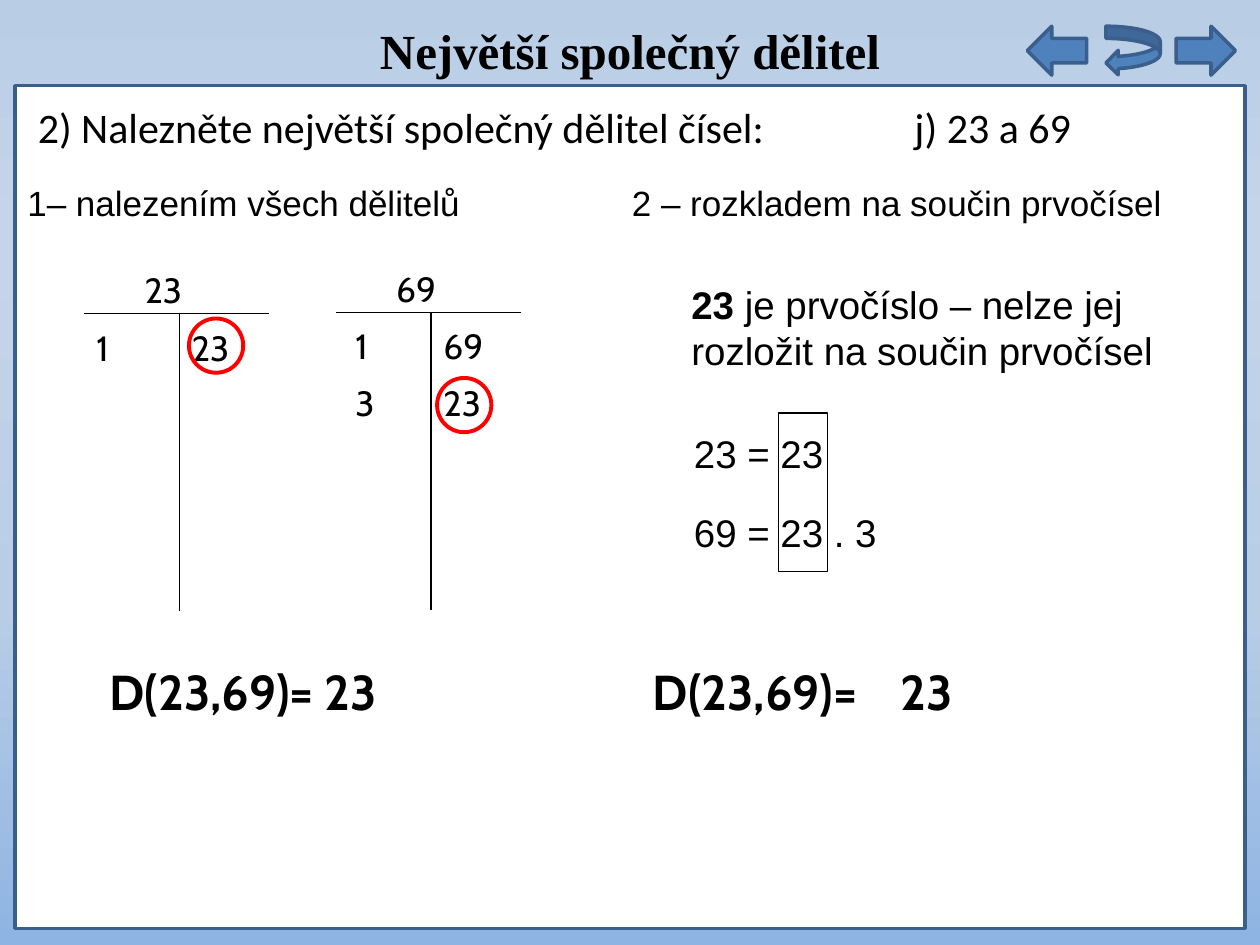
from copy import deepcopy
from pptx import Presentation
from pptx.dml.color import RGBColor
from pptx.enum.shapes import MSO_CONNECTOR as Link, MSO_SHAPE as Kind
from pptx.enum.text import MSO_ANCHOR as Anchor, MSO_AUTO_SIZE as Auto, PP_ALIGN as Align
from pptx.oxml.ns import qn
from pptx.oxml.xmlchemy import OxmlElement as Node
from pptx.util import Pt

BLACK = RGBColor(0, 0, 0)
WHITE = RGBColor(255, 255, 255)
RED = RGBColor(255, 0, 0)
BLUE = RGBColor(0x4F, 0x81, 0xBD)
NAVY = RGBColor(0x3A, 0x5F, 0x8C)
SKY = [(0, "B9CDE5"), (25, "C5D5E9"), (64, "B9CDE5"), (100, "8EB4E3")]

TITLE = {"name": "Times New Roman", "size": Pt(28), "bold": True}
TASK = {"name": "Calibri", "size": Pt(24)}
HEAD = {"name": "Arial", "size": Pt(20)}
BODY = {"name": "Arial", "size": Pt(22)}
DIGIT = {"name": "Cabin", "size": Pt(20)}
ANSWER = {"name": "Cabin", "size": Pt(28), "bold": True}


def paint(slide):
    """Fill the background with the sky gradient."""
    fill = slide.background.fill
    fill.gradient()
    fill.gradient_angle = 270
    stops = slide.element.find(".//" + qn("a:gsLst"))
    for old in list(stops):
        stops.remove(old)
    for pos, tint in SKY:
        stop, color = Node("a:gs"), Node("a:srgbClr")
        stop.set("pos", str(pos * 1000))
        color.set("val", tint)
        stop.append(color)
        stops.append(stop)


def style(run, form):
    for key, value in form.items():
        setattr(run.font, key, value)
    run.font.color.rgb = BLACK


def text(slide, box, words, form, anchor=Anchor.TOP):
    """Add a text box; words is a string or a list of (string, bold)."""
    frame = slide.shapes.add_textbox(*map(Pt, box)).text_frame
    frame.word_wrap = True
    frame.vertical_anchor = anchor
    para = frame.paragraphs[0]
    parts = [(words, form.get("bold", False))] if isinstance(words, str) else words
    for part, bold in parts:
        run = para.add_run()
        run.text = part
        style(run, {**form, "bold": bold})
    return para


def shape(slide, kind, box, line, width, fill=None):
    item = slide.shapes.add_shape(kind, *map(Pt, box))
    item.shadow.inherit = False
    if fill is None:
        item.fill.background()
    else:
        item.fill.solid()
        item.fill.fore_color.rgb = fill
    item.line.color.rgb = line
    item.line.width = Pt(width)


def rule(slide, *ends):
    line = slide.shapes.add_connector(Link.STRAIGHT, *map(Pt, ends))
    line.line.color.rgb = BLACK
    line.line.width = Pt(0.75)
    line.element.spPr.append(Node("a:effectLst"))


def title(slide, words):
    item = slide.shapes.title
    form = {"left": 8.5, "top": 8, "width": 703, "height": 41}
    for key, value in form.items():
        setattr(item, key, Pt(value))
    frame = item.text_frame
    frame.auto_size = Auto.NONE
    frame.vertical_anchor = Anchor.TOP
    para = frame.paragraphs[0]
    para.alignment = Align.CENTER
    run = para.add_run()
    run.text = words
    style(run, TITLE)


def pairs(slide, mid, top, left, number, rows):
    """Draw a T-shaped table of divisor pairs around the stem at mid."""
    for row, (low, high) in enumerate(rows):
        y = top + 3.5 + 32.4 * row
        text(slide, (left, y, 51, 31.5), low, DIGIT)
        text(slide, (mid, y, 51, 31.5), high, DIGIT)
    rule(slide, mid - 54.5, top, mid + 51.5, top)
    rule(slide, mid, top, mid, top + 170)
    text(slide, (mid - 27, top - 29.2, 51, 31.5), number, DIGIT)


def main():
    deck = Presentation()
    deck.slide_width, deck.slide_height = Pt(720), Pt(540)
    slide = deck.slides.add_slide(deck.slide_layouts[5])
    paint(slide)

    # Panel, title and navigation arrows
    shape(slide, Kind.RECTANGLE, (8.5, 49, 703, 481.5), NAVY, 2, WHITE)
    title(slide, "Největší společný dělitel")
    for kind, x, wide in ((Kind.LEFT_ARROW, 587, 34),
                          (Kind.CURVED_LEFT_ARROW, 632, 31),
                          (Kind.RIGHT_ARROW, 672, 34)):
        shape(slide, kind, (x, 15, wide, 28), NAVY, 2, BLUE)

    # Task, with a tab stop before the numbers
    task = text(slide, (14.5, 54.5, 700, 37),
                "2) Nalezněte největší společný dělitel čísel:\tj) 23 a 69", TASK)
    tabs, tab = Node("a:tabLst"), Node("a:tab")
    tab.set("pos", str(Pt(501)))
    tab.set("algn", "l")
    tabs.append(tab)
    task._p.get_or_add_pPr().append(tabs)

    # Headings of the two methods
    text(slide, (8.5, 100, 278, 31.5), "1– nalezením všech dělitelů", HEAD)
    text(slide, (354, 100, 346, 31.5), "2 – rozkladem na součin prvočísel", HEAD)

    # Method 1: all divisors, the common one circled
    pairs(slide, 102.5, 179.3, 48, "23", [("1", "23")])
    pairs(slide, 246.3, 178.5, 196, "69", [("1", "69"), ("3", "23")])
    for x, y in ((108, 182), (249.8, 216)):
        shape(slide, Kind.OVAL, (x, y, 31, 31), RED, 2.25)

    # Method 2: prime factors, the common one boxed
    text(slide, (388, 157, 312, 60.5),
         [("23", True), (" je prvočíslo – nelze jej rozložit na součin prvočísel", False)],
         BODY)
    for y, words in ((242, "23 = 23"), (287.3, "69 = 23 . 3")):
        text(slide, (389.5, y, 276.5, 34), words, BODY)
    shape(slide, Kind.RECTANGLE, (445, 236, 28, 90.5), BLACK, 0.75)

    # Answers
    for x, wide, words in ((55.5, 244, "D(23,69)= 23"),
                           (366, 255, "D(23,69)="),
                           (507.6, 85, "23")):
        text(slide, (x, 366.5, wide, 57), words, ANSWER, Anchor.MIDDLE)

    deck.save("out.pptx")


if __name__ == "__main__":
    main()
